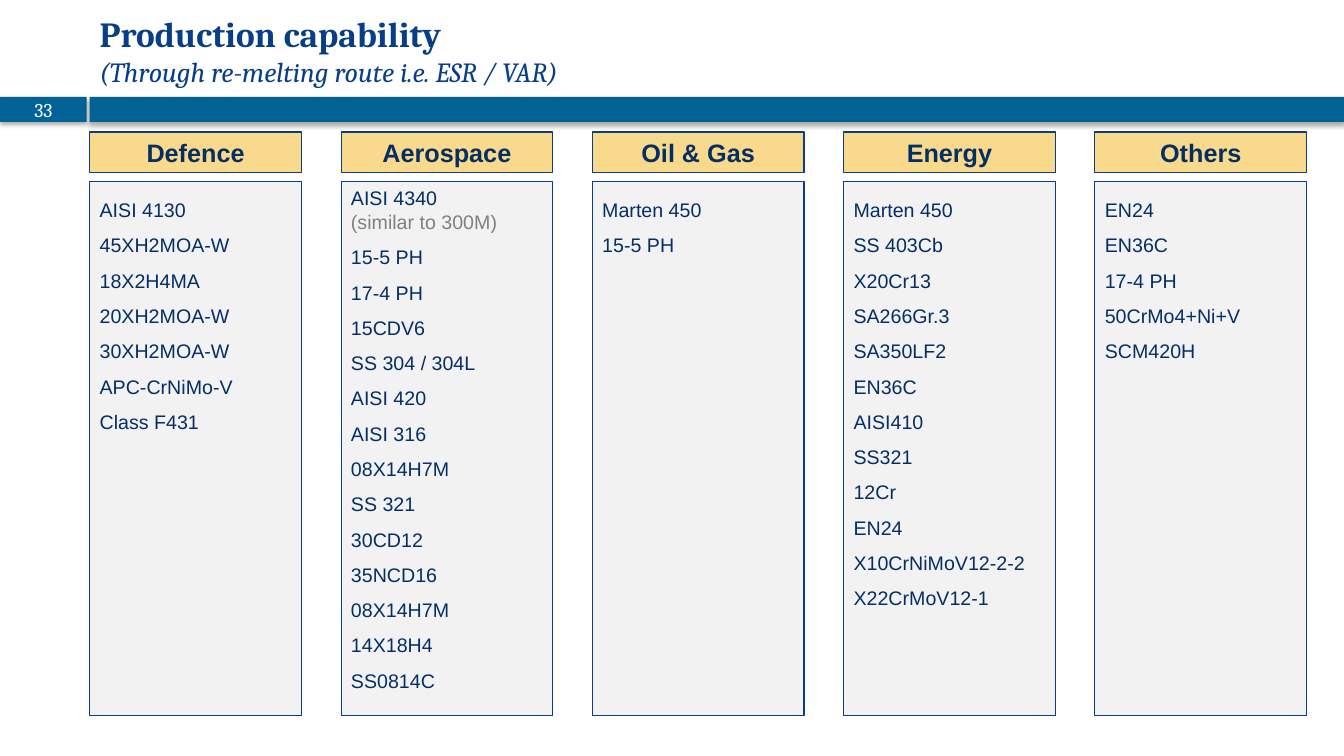
from lxml import etree
from pptx import Presentation
from pptx.dml.color import RGBColor
from pptx.enum import shapes, text
from pptx.oxml import ns
from pptx.util import Inches, Pt

COLORS = {
    "bar": "016296",
    "heading": "F9D98C",
    "panel": "F2F2F2",
    "line": "073E87",
    "title": "073E87",
    "ink": "052E65",
    "note": "808080",
    "white": "FFFFFF",
}
SLIDE_WIDTH, SLIDE_HEIGHT = 13.33, 7.5
FIRST_LEFT, LAST_LEFT, COLUMN_TOP = 0.89, 10.86, 1.31
COLUMN_WIDTH, COLUMN_HEIGHT = 2.1, 5.79
HEADING_HEIGHT, PANEL_OFFSET = 0.4, 0.49

GRADES = {
    "Defence": ["AISI 4130", "45XH2MOA-W", "18X2H4MA", "20XH2MOA-W",
                "30XH2MOA-W", "APC-CrNiMo-V", "Class F431"],
    "Aerospace": ["AISI 4340", "(similar to 300M)", "15-5 PH", "17-4 PH",
                  "15CDV6", "SS 304 / 304L", "AISI 420", "AISI 316",
                  "08X14H7M", "SS 321", "30CD12", "35NCD16", "08X14H7M",
                  "14X18H4", "SS0814C"],
    "Oil & Gas": ["Marten 450", "15-5 PH"],
    "Energy": ["Marten 450", "SS 403Cb", "X20Cr13", "SA266Gr.3", "SA350LF2",
               "EN36C", "AISI410", "SS321", "12Cr", "EN24",
               "X10CrNiMoV12-2-2", "X22CrMoV12-1"],
    "Others": ["EN24", "EN36C", "17-4 PH", "50CrMo4+Ni+V", "SCM420H"],
}
SINGLE_SPACED = {"AISI 4340", "(similar to 300M)"}


def color(name):
    return RGBColor.from_string(COLORS[name])


def style(run, font, size, color_name, bold=False, italic=False):
    run.font.name = font
    run.font.size = Pt(size)
    run.font.color.rgb = color(color_name)
    run.font.bold = bold
    run.font.italic = italic


def add_box(slide, box, fill, line=None):
    """Add a flat rectangle; box is left, top, width, height in inches."""
    shape = slide.shapes.add_shape(
        shapes.MSO_SHAPE.RECTANGLE, *map(Inches, box))
    shape.shadow.inherit = False
    shape.fill.solid()
    shape.fill.fore_color.rgb = color(fill)
    if line:
        shape.line.color.rgb = color(line)
        shape.line.width = Pt(0.75)
    else:
        shape.line.fill.background()
    return shape


def add_drop_shadow(shape):
    effects = shape._element.spPr.find(ns.qn("a:effectLst"))
    shadow = etree.SubElement(
        effects, ns.qn("a:outerShdw"), blurRad=str(Pt(3.5)),
        dist=str(Pt(2.2)), dir="5400000", algn="t", rotWithShape="0")
    tint = etree.SubElement(shadow, ns.qn("a:srgbClr"), val="000000")
    etree.SubElement(tint, ns.qn("a:alpha"), val="32000")


def add_title(slide, box):
    frame = slide.shapes.add_textbox(*map(Inches, box)).text_frame
    frame.word_wrap = True
    frame.vertical_anchor = text.MSO_ANCHOR.MIDDLE
    paragraph = frame.paragraphs[0]
    paragraph.text = (
        "Production capability\v(Through re-melting route i.e. ESR / VAR)")
    heading, subtitle = paragraph.runs
    style(heading, "Cambria", 25.2, "title", bold=True)
    style(subtitle, "Cambria", 19.8, "title", italic=True)


def add_number_bar(slide, box):
    """Add the page number block and the long bar to its right."""
    left, top, width, height = box
    number_width, gap = 0.86, 0.03
    offset = number_width + gap
    number = add_box(slide, (left, top, number_width, height), "bar")
    bar = add_box(slide, (left + offset, top, width - offset, height), "bar")
    for shape in (number, bar):
        add_drop_shadow(shape)
    number.text_frame.text = "33"
    number.text_frame.vertical_anchor = text.MSO_ANCHOR.MIDDLE
    paragraph = number.text_frame.paragraphs[0]
    paragraph.alignment = text.PP_ALIGN.CENTER
    style(paragraph.runs[0], "Cambria", 14, "white")


def add_column(slide, box, sector, grades):
    """Add a sector heading and the panel listing its grades."""
    left, top, width, height = box
    heading = add_box(
        slide, (left, top, width, HEADING_HEIGHT), "heading", "line")
    heading.text_frame.text = sector
    heading.text_frame.vertical_anchor = text.MSO_ANCHOR.TOP
    paragraph = heading.text_frame.paragraphs[0]
    paragraph.alignment = text.PP_ALIGN.CENTER
    style(paragraph.runs[0], "Arial", 18, "ink", bold=True)

    panel = add_box(
        slide, (left, top + PANEL_OFFSET, width, height - PANEL_OFFSET),
        "panel", "line")
    frame = panel.text_frame
    frame.text = "\n".join(grades)
    frame.vertical_anchor = text.MSO_ANCHOR.TOP
    for paragraph, grade in zip(frame.paragraphs, grades):
        paragraph.alignment = text.PP_ALIGN.LEFT
        paragraph.line_spacing = 1.0 if grade in SINGLE_SPACED else 1.5
        ink = "note" if grade.startswith("(") else "ink"
        style(paragraph.runs[0], "Arial", 14, ink)


def main():
    presentation = Presentation()
    presentation.slide_width = Inches(SLIDE_WIDTH)
    presentation.slide_height = Inches(SLIDE_HEIGHT)
    slide = presentation.slides.add_slide(presentation.slide_layouts[6])

    add_number_bar(slide, (0, 0.96, SLIDE_WIDTH, 0.25))
    pitch = (LAST_LEFT - FIRST_LEFT) / (len(GRADES) - 1)
    for index, (sector, grades) in enumerate(GRADES.items()):
        left = FIRST_LEFT + index * pitch
        add_column(slide, (left, COLUMN_TOP, COLUMN_WIDTH, COLUMN_HEIGHT),
                   sector, grades)
    add_title(slide, (0.89, 0.08, 10.92, 0.83))
    presentation.save("out.pptx")


if __name__ == "__main__":
    main()
